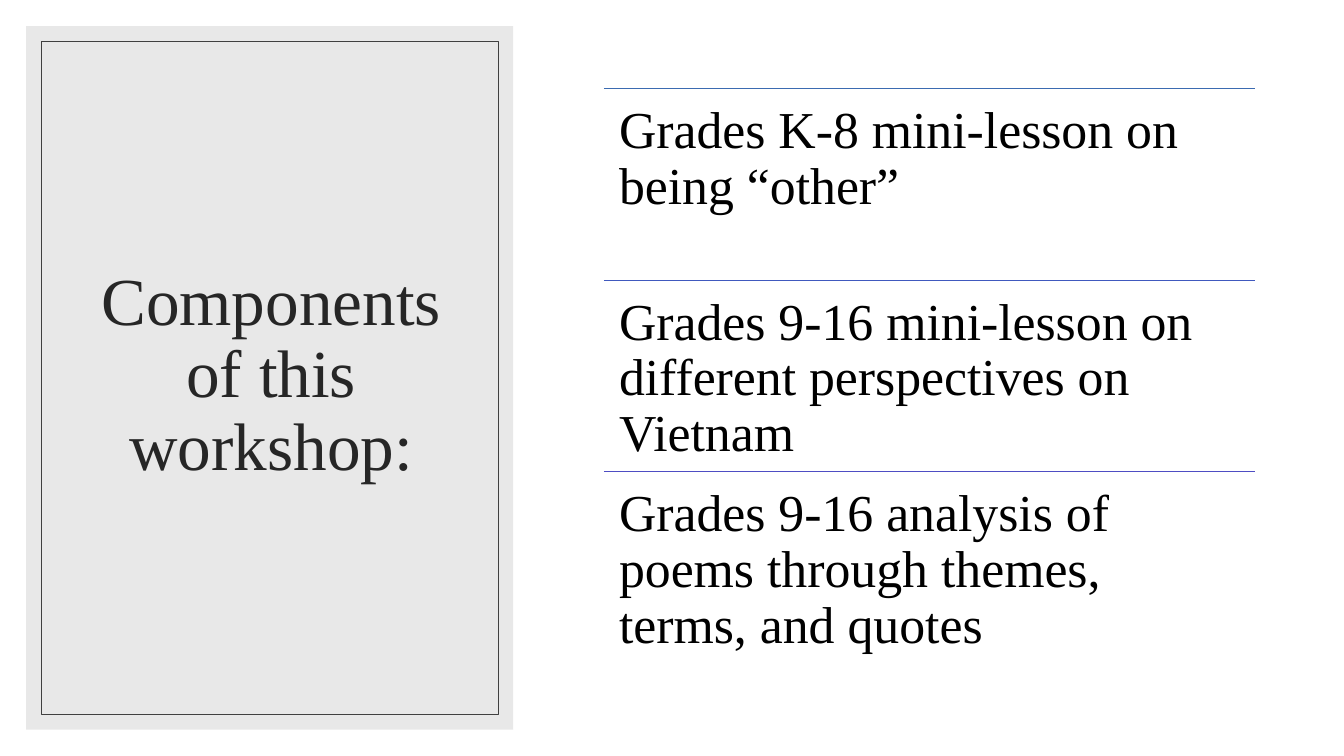
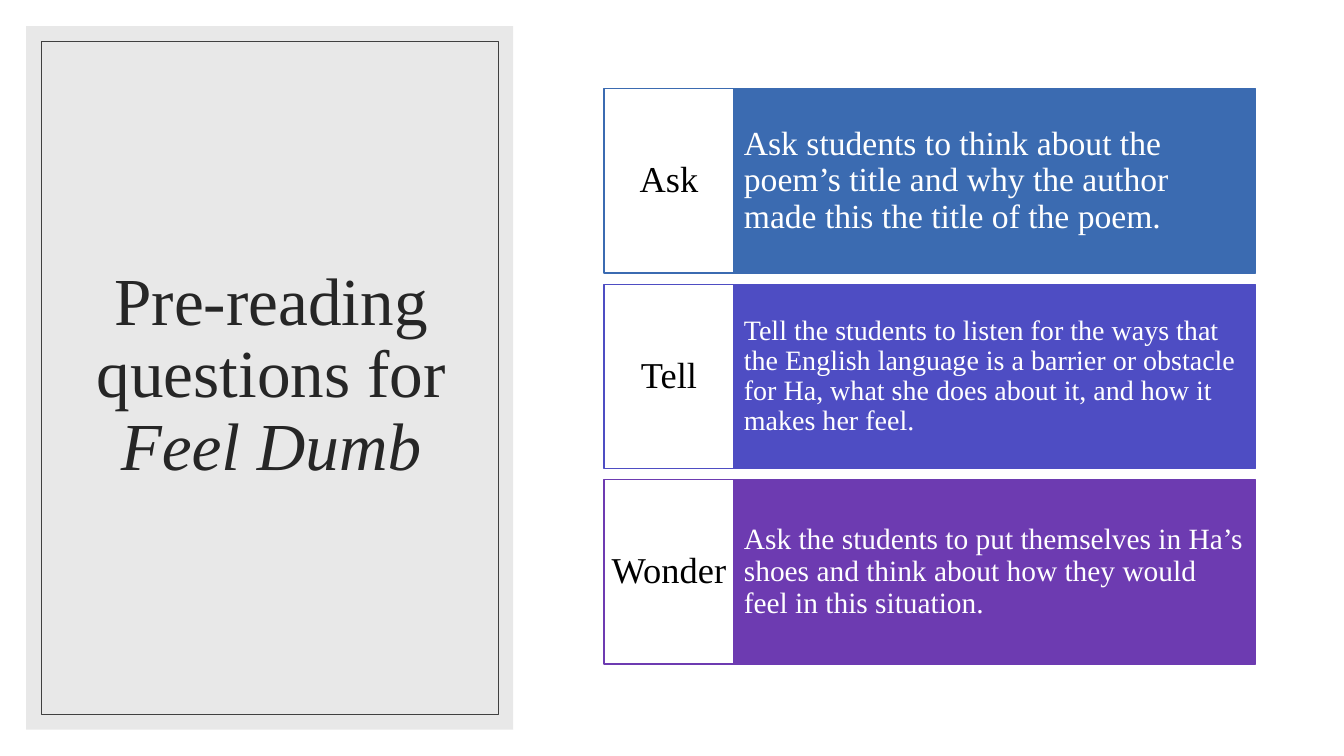
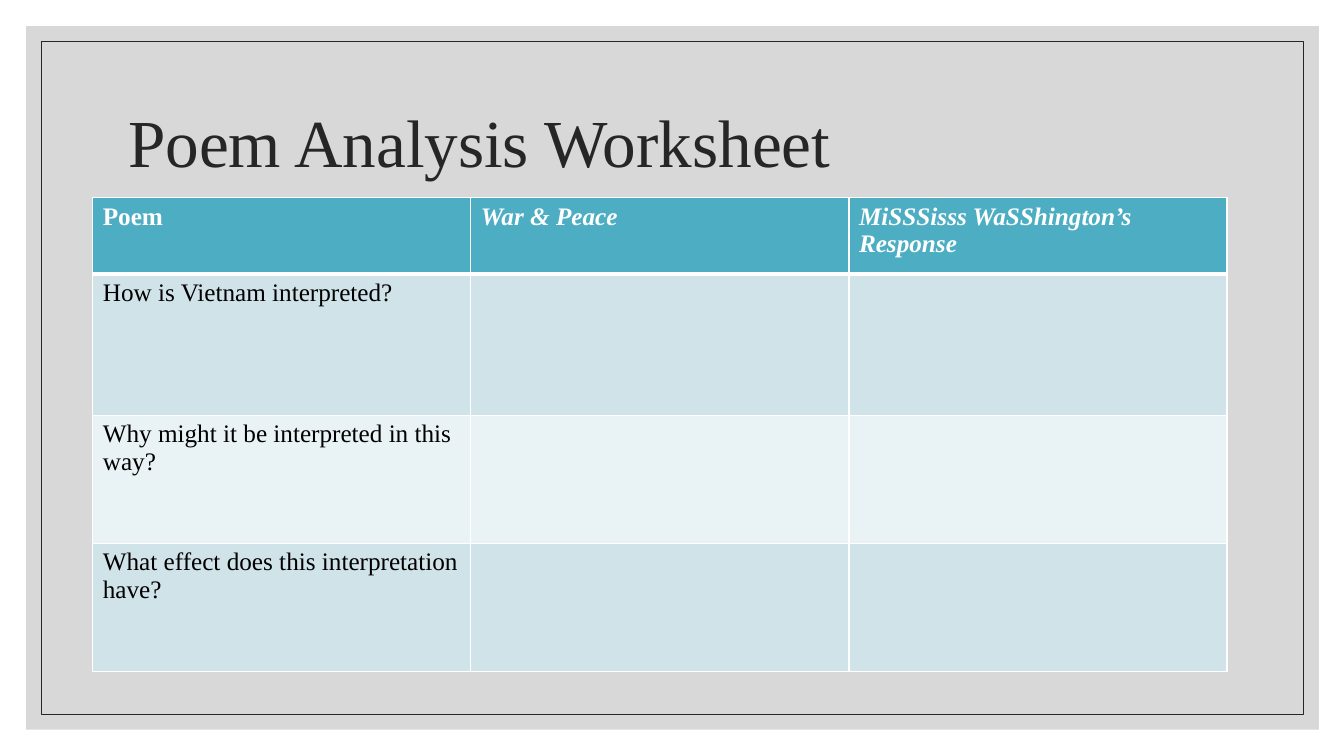
import dataclasses

import lxml.etree
import pptx
import pptx.dml.color
import pptx.enum.shapes
import pptx.enum.text
import pptx.oxml.ns
import pptx.util

Inches = pptx.util.Inches
Pt = pptx.util.Pt
Align = pptx.enum.text.PP_ALIGN
Anchor = pptx.enum.text.MSO_ANCHOR
qn = pptx.oxml.ns.qn


@dataclasses.dataclass(frozen=True)
class Theme:
    """Colours and type sizes shared by the slides."""
    font: str = "Times New Roman"
    white: str = "FFFFFF"
    black: str = "000000"
    ink: str = "262626"
    edge: str = "404040"
    pale: str = "D9D9D9"
    grey: str = "BFBFBF"
    blue: str = "3B6BB1"
    azure: str = "4059BE"
    indigo: str = "4E4DC3"
    purple: str = "6D3BB1"
    teal: str = "4DAEC3"
    bands: tuple = ("D0E3E9", "E9F2F5")
    title: int = 48
    item: int = 37
    label: int = 26
    cell: int = 18


def rgb(code):
    """Turn a hex code into a colour."""
    return pptx.dml.color.RGBColor.from_string(code)


class Deck:
    """Holds the style and the current slide, and draws each kind of element."""

    def __init__(self, theme):
        """Start an empty wide presentation."""
        self.theme = theme
        self.show = pptx.Presentation()
        self.show.slide_width = Inches(13.33)
        self.show.slide_height = Inches(7.5)
        self.slide = None

    def start(self, width, fill, edge):
        """Add a slide with a translucent panel and a thin frame inside it."""
        self.slide = self.show.slides.add_slide(self.show.slide_layouts[5])
        panel = self.rect(0.26, 0.26, width, 6.98, fill)
        color = panel.element.spPr.find(qn("a:solidFill"))[0]
        lxml.etree.SubElement(color, qn("a:alpha"), val="60000")
        frame = self.rect(0.41, 0.41, width - 0.3, 6.68, None, edge, 0.5)
        frame.element.addnext(self.slide.shapes.title.element)

    def rect(self, x, y, w, h, fill=None, line=None, weight=1):
        """Draw a rectangle."""
        shape = self.slide.shapes.add_shape(
            pptx.enum.shapes.MSO_SHAPE.RECTANGLE,
            Inches(x), Inches(y), Inches(w), Inches(h))
        shape.shadow.inherit = False
        if fill:
            shape.fill.solid()
            shape.fill.fore_color.rgb = rgb(fill)
        else:
            shape.fill.background()
        if line:
            shape.line.color.rgb = rgb(line)
            shape.line.width = Pt(weight)
        else:
            shape.line.fill.background()
        return shape

    def style(self, para, size, color, align=Align.LEFT, space=0.9):
        """Format a paragraph."""
        para.alignment = align
        para.line_spacing = space
        para.font.name = self.theme.font
        para.font.size = Pt(size)
        para.font.color.rgb = rgb(color)

    def text(self, shape, words, size, color, pad, align=Align.LEFT,
             anchor=Anchor.MIDDLE):
        """Put one paragraph into a shape, with side and top padding."""
        frame = shape.text_frame
        frame.word_wrap = True
        frame.vertical_anchor = anchor
        frame.margin_left = frame.margin_right = Inches(pad[0])
        frame.margin_top = frame.margin_bottom = Inches(pad[1])
        para = frame.paragraphs[0]
        para.text = words
        self.style(para, size, color, align)

    def title(self, x, y, w, h, words, slant="", align=Align.CENTER):
        """Place the title, with an optional italic ending."""
        shape = self.slide.shapes.title
        shape.left, shape.top = Inches(x), Inches(y)
        shape.width, shape.height = Inches(w), Inches(h)
        frame = shape.text_frame
        frame.auto_size = pptx.enum.text.MSO_AUTO_SIZE.NONE
        frame.vertical_anchor = Anchor.MIDDLE
        para = frame.paragraphs[0]
        para.text = words
        if slant:
            run = para.add_run()
            run.text = slant
            run.font.italic = True
        self.style(para, self.theme.title, self.theme.ink, align)

    def side(self, words, slant=""):
        """Start a slide with its title in a panel on the left."""
        self.start(4.83, self.theme.pale, self.theme.edge)
        self.title(0.63, 0.61, 4.12, 6.24, words, slant)

    def rule(self, x, y, w, color):
        """Draw a horizontal line."""
        line = self.slide.shapes.add_connector(
            pptx.enum.shapes.MSO_CONNECTOR.STRAIGHT,
            Inches(x), Inches(y), Inches(x + w), Inches(y))
        line.line.color.rgb = rgb(color)
        line.line.width = Pt(1)
        lxml.etree.SubElement(line.element.spPr, qn("a:effectLst"))

    def item(self, y, words, color):
        """Set an item under a coloured rule."""
        self.rule(5.99, y, 6.46, color)
        box = self.slide.shapes.add_textbox(
            Inches(5.99), Inches(y), Inches(6.46), Inches(1.9))
        self.text(box, words, self.theme.item, self.theme.black,
                  (0.15, 0.15), anchor=Anchor.TOP)

    def card(self, y, label, words, size, color):
        """Draw a coloured card with a white label on its left."""
        theme = self.theme
        body = self.rect(7.28, y, 5.17, 1.83, color, color)
        self.text(body, words, size, theme.white, (0.1, 0.1))
        tag = self.rect(5.99, y, 1.29, 1.83, theme.white, color)
        self.text(tag, label, theme.label, theme.black, (0.07, 0.18),
                  Align.CENTER)

    def border(self, cell, side, weight):
        """Draw one white side of a cell."""
        props = cell._tc.get_or_add_tcPr()
        line = lxml.etree.SubElement(
            props, qn("a:ln" + side), w=str(Pt(weight)))
        fill = lxml.etree.SubElement(line, qn("a:solidFill"))
        lxml.etree.SubElement(fill, qn("a:srgbClr"), val=self.theme.white)

    def table(self, x, y, width, heights, rows):
        """Draw a banded table with a header row."""
        theme = self.theme
        count = len(rows[0])
        grid = self.slide.shapes.add_table(
            len(rows), count, Inches(x), Inches(y),
            Inches(width * count), Inches(sum(heights))).table
        for col in grid.columns:
            col.width = Inches(width)
        for r, (height, row) in enumerate(zip(heights, rows)):
            grid.rows[r].height = Inches(height)
            head = r == 0
            for c, words in enumerate(row):
                cell = grid.cell(r, c)
                for side in "LRTB":
                    thick = (r, side) in ((0, "B"), (1, "T"))
                    self.border(cell, side, 3 if thick else 1)
                cell.fill.solid()
                cell.fill.fore_color.rgb = rgb(
                    theme.teal if head else theme.bands[(r - 1) % 2])
                para = cell.text_frame.paragraphs[0]
                para.text = words
                self.style(para, theme.cell,
                           theme.white if head else theme.black, space=1.0)
                para.font.bold = head
                para.font.italic = head and c > 0


def main():
    """Build the three slides."""
    theme = Theme()
    deck = Deck(theme)

    deck.side("Components of this workshop:")
    items = (
        ("Grades K-8 mini-lesson on being “other”", theme.blue),
        ("Grades 9-16 mini-lesson on different perspectives on Vietnam",
         theme.azure),
        ("Grades 9-16 analysis of poems through themes, terms, and quotes",
         theme.indigo),
    )
    for n, item in enumerate(items):
        deck.item(0.88 + 1.9 * n, *item)

    deck.side("Pre-reading questions for ", "Feel Dumb")
    cards = (
        ("Ask", "Ask students to think about the poem’s title and why the "
         "author made this the title of the poem.", 24, theme.blue),
        ("Tell", "Tell the students to listen for the ways that the English "
         "language is a barrier or obstacle for Ha, what she does about it, "
         "and how it makes her feel.", 20, theme.indigo),
        ("Wonder", "Ask the students to put themselves in Ha’s shoes and "
         "think about how they would feel in this situation.", 21,
         theme.purple),
    )
    for n, card in enumerate(cards):
        deck.card(0.88 + 1.94 * n, *card)

    deck.start(12.82, theme.grey, theme.ink)
    deck.title(1.17, 0.7, 11, 1.5, "Poem Analysis Worksheet",
               align=Align.LEFT)
    deck.table(0.92, 1.96, 3.75, (0.76, 1.4, 1.27, 1.27), (
        ("Poem", "War & Peace", "MiSSSisss WaSShington’s Response"),
        ("How is Vietnam interpreted?", "", ""),
        ("Why might it be interpreted in this way?", "", ""),
        ("What effect does this interpretation have?", "", ""),
    ))

    deck.show.save("out.pptx")


if __name__ == "__main__":
    main()
